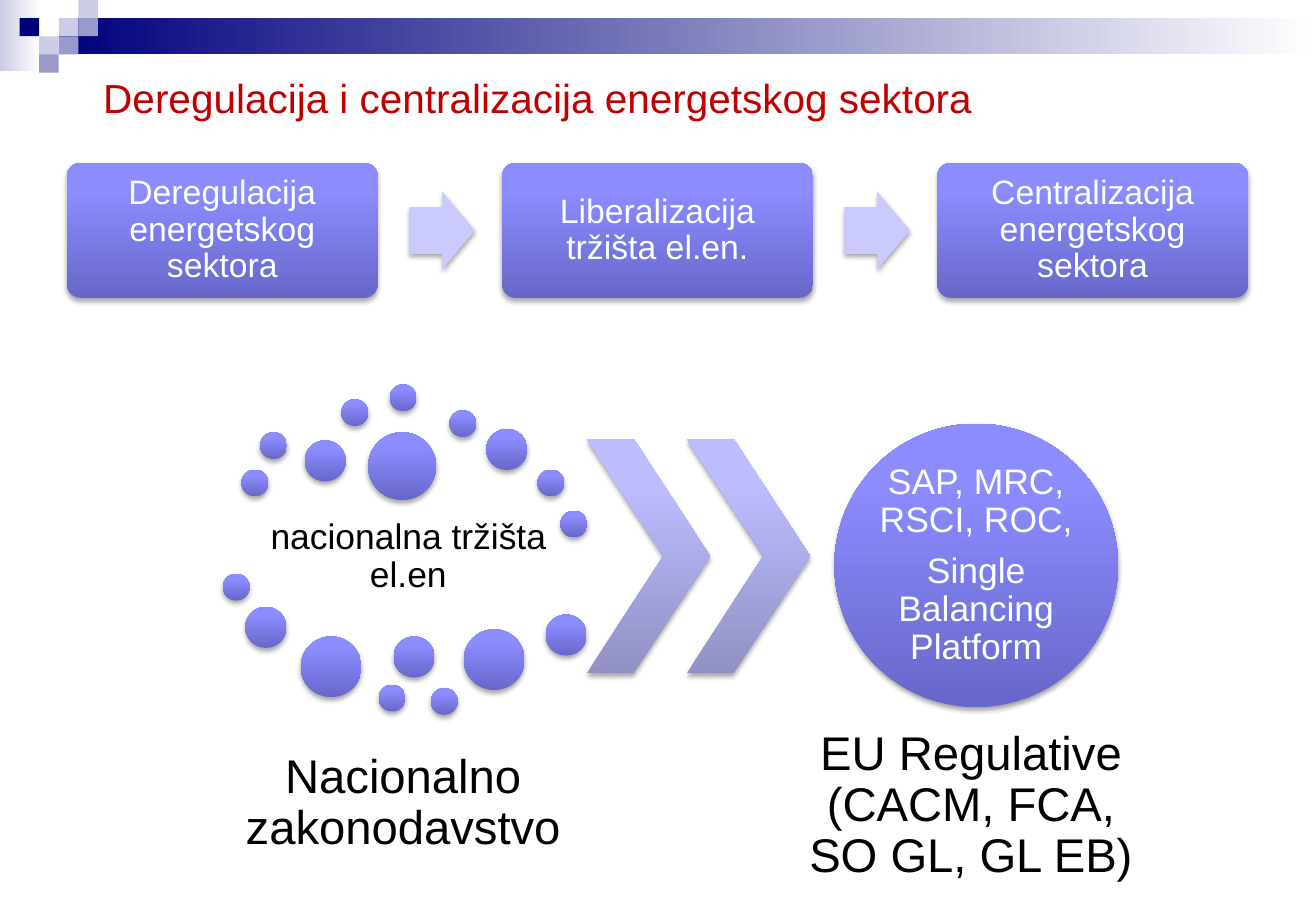
from lxml.etree import SubElement
from pptx import Presentation
from pptx.dml.color import RGBColor
from pptx.enum.shapes import MSO_SHAPE
from pptx.enum.text import MSO_ANCHOR, PP_ALIGN
from pptx.oxml import parse_xml
from pptx.oxml.ns import nsdecls, qn
from pptx.util import Cm, Pt

COLOURS = {
    "navy": "00007D", "light": "CCCCE6", "mid": "9999CC", "white": "FFFFFF",
    "black": "000000", "red": "C00000", "arrow": "CACAFF",
}
BLUE = [(0, "6767CA"), (80, "8C8CFF"), (100, "8E8EFF")]
PALE = [(0, "9191C4"), (80, "BCBCFF"), (100, "BEBEFF")]

TITLE = "Deregulacija i centralizacija energetskog sektora"
STEPS = [
    "Deregulacija energetskog sektora",
    "Liberalizacija tržišta el.en.",
    "Centralizacija energetskog sektora",
]
PLATFORM = ["SAP, MRC, RSCI, ROC,", "Single Balancing Platform"]
LABELS = [
    ("nacionalna tržišta el.en", 21, 0.08, (5.06, 10.5, 6.96, 2.29)),
    ("Nacionalno zakonodavstvo", 28, 0.1, (4.95, 14.66, 6.96, 4.29)),
    ("EU Regulative (CACM, FCA, SO GL, GL EB)", 28, 0.1, (16.81, 14.71, 6.99, 4.29)),
]
MARKET_DOTS = {
    0.56: [(5.05, 9.82), (5.44, 9.04), (7.14, 8.35), (8.15, 8.04), (9.4, 8.58),
           (11.24, 9.82), (11.72, 10.68), (4.66, 12), (7.92, 14.32), (9.01, 14.39)],
    0.86: [(6.37, 9.21), (10.17, 8.97), (5.13, 12.69), (8.23, 13.31), (11.41, 12.85)],
    1.27: [(6.29, 13.31), (9.7, 13.16)],
    1.42: [(7.7, 9.04)],
}
SQUARE_WIDTH, SQUARE_HEIGHT = 0.41, 0.38
SQUARES = [
    (3, 1, "light"), (4, 0, "light"), (4, 1, "mid"), (2, 2, "light"),
    (1, 1, "navy"), (3, 2, "mid"), (2, 3, "mid"),
]
STEP_LEFT, STEP_TOP, STEP_WIDTH, STEP_HEIGHT, STEP_PITCH = 1.4, 3.41, 6.5, 2.82, 9.1
ARROW_OFFSET, ARROW_WIDTH, ARROW_HEIGHT = 7.16, 1.37, 1.63
CHEVRON_PITCH = 2.09


def add_text(shape, paragraphs, size=20, colour="white", align=PP_ALIGN.CENTER,
             inset=0.0, spacing=0.9):
    """Write paragraphs into a shape."""
    frame = shape.text_frame
    frame.word_wrap = True
    frame.vertical_anchor = MSO_ANCHOR.MIDDLE
    frame.margin_left = frame.margin_right = Cm(inset)
    frame.margin_top = frame.margin_bottom = Cm(inset)
    for index, text in enumerate(paragraphs):
        paragraph = frame.paragraphs[0] if index == 0 else frame.add_paragraph()
        paragraph.text = text
        paragraph.alignment = align
        paragraph.line_spacing = spacing
        paragraph.space_after = Pt(size * 0.35)
        paragraph.font.name = "Arial"
        paragraph.font.size = Pt(size)
        paragraph.font.color.rgb = RGBColor.from_string(COLOURS[colour])


def add_filled(slide, kind, box, fill, angle=270, shadow=True, adjustments=()):
    """Add a borderless shape filled with a colour name or gradient stops."""
    shape = slide.shapes.add_shape(kind, *map(Cm, box))
    for index, value in enumerate(adjustments):
        shape.adjustments[index] = value
    properties = shape._element.spPr
    if isinstance(fill, str):
        shape.fill.solid()
        shape.fill.fore_color.rgb = RGBColor.from_string(COLOURS[fill])
    else:
        stops = "".join(
            f'<a:gs pos="{position * 1000}"><a:srgbClr val="{colour}"/></a:gs>'
            for position, colour in fill
        )
        properties.insert(2, parse_xml(
            f'<a:gradFill {nsdecls("a")} rotWithShape="1"><a:gsLst>{stops}</a:gsLst>'
            f'<a:lin ang="{angle * 60000}" scaled="0"/></a:gradFill>'
        ))
    shape.line.fill.background()
    shape.shadow.inherit = False
    if shadow:
        effect = SubElement(
            properties.find(qn("a:effectLst")), qn("a:outerShdw"),
            blurRad=str(Pt(3.1)), dist=str(Pt(1.8)), dir="5400000", rotWithShape="0",
        )
        colour = SubElement(effect, qn("a:srgbClr"), val=COLOURS["black"])
        SubElement(colour, qn("a:alpha"), val="35000")
    return shape


def add_header(slide):
    """Draw the gradient bar, the corner squares and the title."""
    for box, start in [((0, 0, 0.86, 1.48), "light"), ((1.24, 0.38, 26.27, 0.76), "navy")]:
        stops = [(0, COLOURS[start]), (100, COLOURS["white"])]
        add_filled(slide, MSO_SHAPE.RECTANGLE, box, stops, angle=0, shadow=False)
    for column, row, colour in SQUARES:
        box = (column * SQUARE_WIDTH, row * SQUARE_HEIGHT, SQUARE_WIDTH, SQUARE_HEIGHT)
        add_filled(slide, MSO_SHAPE.RECTANGLE, box, colour, shadow=False)
    title = slide.shapes.add_textbox(Cm(1.91), Cm(1.6), Cm(24.77), Cm(0.86))
    add_text(title, [TITLE], size=24, colour="red", align=PP_ALIGN.LEFT,
             inset=0.25, spacing=1.0)


def add_steps(slide):
    """Draw the row of steps with an arrow between neighbours."""
    arrow_top = STEP_TOP + (STEP_HEIGHT - ARROW_HEIGHT) / 2
    for index, text in enumerate(STEPS):
        left = STEP_LEFT + index * STEP_PITCH
        step = add_filled(slide, MSO_SHAPE.ROUNDED_RECTANGLE,
                          (left, STEP_TOP, STEP_WIDTH, STEP_HEIGHT), BLUE,
                          adjustments=[0.1])
        add_text(step, [text], inset=0.2)
        if index < len(STEPS) - 1:
            add_filled(slide, MSO_SHAPE.RIGHT_ARROW,
                       (left + ARROW_OFFSET, arrow_top, ARROW_WIDTH, ARROW_HEIGHT),
                       "arrow", adjustments=[0.6, 0.5])


def add_markets(slide):
    """Draw the scattered markets merging into one platform."""
    for text, size, inset, box in LABELS:
        label = slide.shapes.add_textbox(*map(Cm, box))
        add_text(label, [text], size=size, colour="black", inset=inset)
    for diameter, places in MARKET_DOTS.items():
        for left, top in places:
            add_filled(slide, MSO_SHAPE.OVAL, (left, top, diameter, diameter), BLUE)
    for index in range(2):
        box = (12.28 + index * CHEVRON_PITCH, 9.19, 2.57, 4.88)
        add_filled(slide, MSO_SHAPE.CHEVRON, box, PALE, adjustments=[0.62])
    platform = add_filled(slide, MSO_SHAPE.OVAL, (17.45, 8.86, 5.93, 5.93), BLUE)
    add_text(platform, PLATFORM, size=21)


def main():
    """Build and save the slide."""
    presentation = Presentation()
    presentation.slide_width = Cm(27.52)
    presentation.slide_height = Cm(19.05)
    slide = presentation.slides.add_slide(presentation.slide_layouts[6])
    add_header(slide)
    add_steps(slide)
    add_markets(slide)
    presentation.save("out.pptx")


if __name__ == "__main__":
    main()
